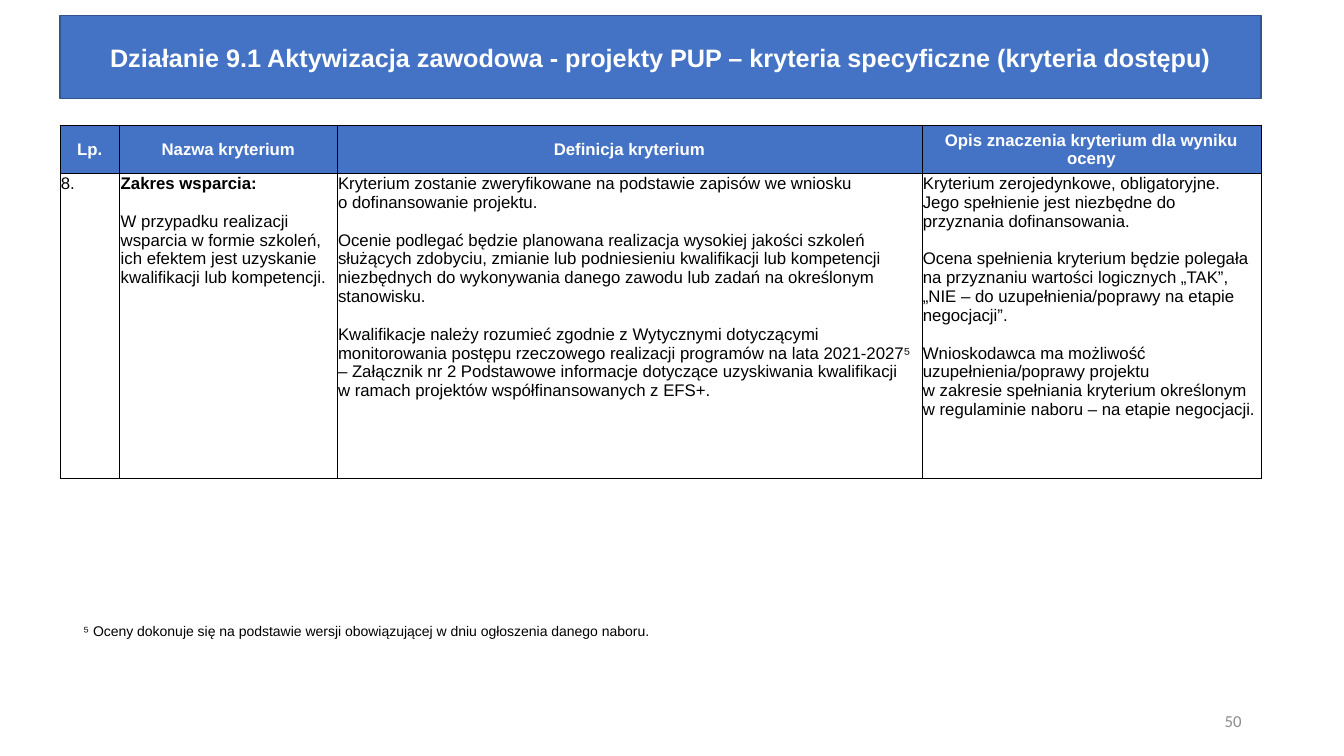
from copy import deepcopy
from lxml import etree
from pptx import Presentation
from pptx import util as u
from pptx.dml.color import RGBColor
from pptx.enum import text as t
from pptx.oxml.ns import qn

BLUE, WHITE, BLACK = "4472C4", "FFFFFF", "000000"
MID = t.MSO_ANCHOR.MIDDLE
CENTER, LEFT, RIGHT = t.PP_ALIGN.CENTER, t.PP_ALIGN.LEFT, t.PP_ALIGN.RIGHT


def px(n):
    return u.Emu(n * 9525)


def write(frame, *paras, size=12, color=BLACK, bold=(), align=LEFT,
          font="Arial", anchor=t.MSO_ANCHOR.TOP, gap=13.5):
    """Fill a frame; bold holds the indexes of bold paragraphs, \\v breaks a line."""
    frame.word_wrap = True
    frame.vertical_anchor = anchor
    for i, words in enumerate(paras):
        para = frame.paragraphs[0] if i == 0 else frame.add_paragraph()
        para.text = words
        para.alignment = align
        para.space_before = u.Pt(gap if i else 0)
        for run in para.runs:
            run.font.size = u.Pt(size)
            run.font.name = font
            run.font.bold = i in bold
            run.font.color.rgb = RGBColor.from_string(color)
        for br in para._p.findall(qn("a:br")):
            br.insert(0, deepcopy(para.runs[0]._r.rPr))


prs = Presentation()
prs.slide_width, prs.slide_height = px(1280), px(720)
slide = prs.slides.add_slide(prs.slide_layouts[5])

# Title bar
title = slide.shapes.title
title.left, title.top, title.width, title.height = map(px, (57, 15, 1144, 79))
title.fill.solid()
title.fill.fore_color.rgb = RGBColor.from_string(BLUE)
title.line.color.rgb = RGBColor.from_string("325491")
title.line.width = u.Pt(1)
title.text_frame.auto_size = t.MSO_AUTO_SIZE.NONE
write(title.text_frame,
      "Działanie 9.1 Aktywizacja zawodowa - projekty PUP – kryteria specyficzne (kryteria dostępu)",
      size=18, color=WHITE, bold=(0,), align=CENTER, anchor=MID)

# Criteria table: each cell is a list of paragraphs
heads = ["Lp.", "Nazwa kryterium", "Definicja kryterium",
         "Opis znaczenia kryterium dla wyniku oceny"]
body = [
    ["8."],
    ["Zakres wsparcia:",
     "W przypadku realizacji wsparcia w formie szkoleń,\v"
     "ich efektem jest uzyskanie kwalifikacji lub kompetencji."],
    ["Kryterium zostanie zweryfikowane na podstawie zapisów we wniosku\v"
     "o dofinansowanie projektu.",
     "Ocenie podlegać będzie planowana realizacja wysokiej jakości szkoleń służących "
     "zdobyciu, zmianie lub podniesieniu kwalifikacji lub kompetencji niezbędnych do "
     "wykonywania danego zawodu lub zadań na określonym stanowisku.",
     "Kwalifikacje należy rozumieć zgodnie z Wytycznymi dotyczącymi monitorowania postępu "
     "rzeczowego realizacji programów na lata 2021-2027⁵ – Załącznik nr 2 Podstawowe "
     "informacje dotyczące uzyskiwania kwalifikacji\v"
     "w ramach projektów współfinansowanych z EFS+."],
    ["Kryterium zerojedynkowe, obligatoryjne. Jego spełnienie jest niezbędne do "
     "przyznania dofinansowania.",
     "Ocena spełnienia kryterium będzie polegała na przyznaniu wartości logicznych „TAK”,\v"
     "„NIE – do uzupełnienia/poprawy na etapie negocjacji”.",
     "Wnioskodawca ma możliwość uzupełnienia/poprawy projektu\v"
     "w zakresie spełniania kryterium określonym w regulaminie naboru – na etapie negocjacji."],
]
table = slide.shapes.add_table(2, 4, px(57), px(119), px(1144), px(337)).table
table.first_row = table.horz_banding = False
for col, wide in zip(table.columns, (57, 207, 557, 323)):
    col.width = px(wide)
for row, high in zip(table.rows, (46, 291)):
    row.height = px(high)

for c, (head, paras) in enumerate(zip(heads, body)):
    for r in range(2):
        cell = table.cell(r, c)
        cell.margin_left = cell.margin_right = cell.margin_top = px(1)
        cell.margin_bottom = 0
        # Thin black border on every side, placed before the fill
        for side in ("lnL", "lnR", "lnT", "lnB"):
            line = etree.SubElement(cell._tc.get_or_add_tcPr(), qn("a:" + side), w="6350")
            fill = etree.SubElement(line, qn("a:solidFill"))
            etree.SubElement(fill, qn("a:srgbClr"), val=BLACK)
        if r == 0:
            cell.fill.solid()
            cell.fill.fore_color.rgb = RGBColor.from_string(BLUE)
            write(cell.text_frame, head, color=WHITE, bold=(0,), align=CENTER)
            cell.vertical_anchor = MID
        else:
            cell.fill.background()
            write(cell.text_frame, *paras, bold=(0,) if c == 1 else ())

# Footnote and page number
note = slide.shapes.add_textbox(px(70), px(588), px(684), px(26))
write(note.text_frame,
      "⁵ Oceny dokonuje się na podstawie wersji obowiązującej w dniu ogłoszenia danego naboru.",
      size=10)
page = slide.shapes.add_textbox(px(904), px(667), px(288), px(38))
write(page.text_frame, "50", color="8C8C8C", align=RIGHT, font="Calibri", anchor=MID)

prs.save("out.pptx")
